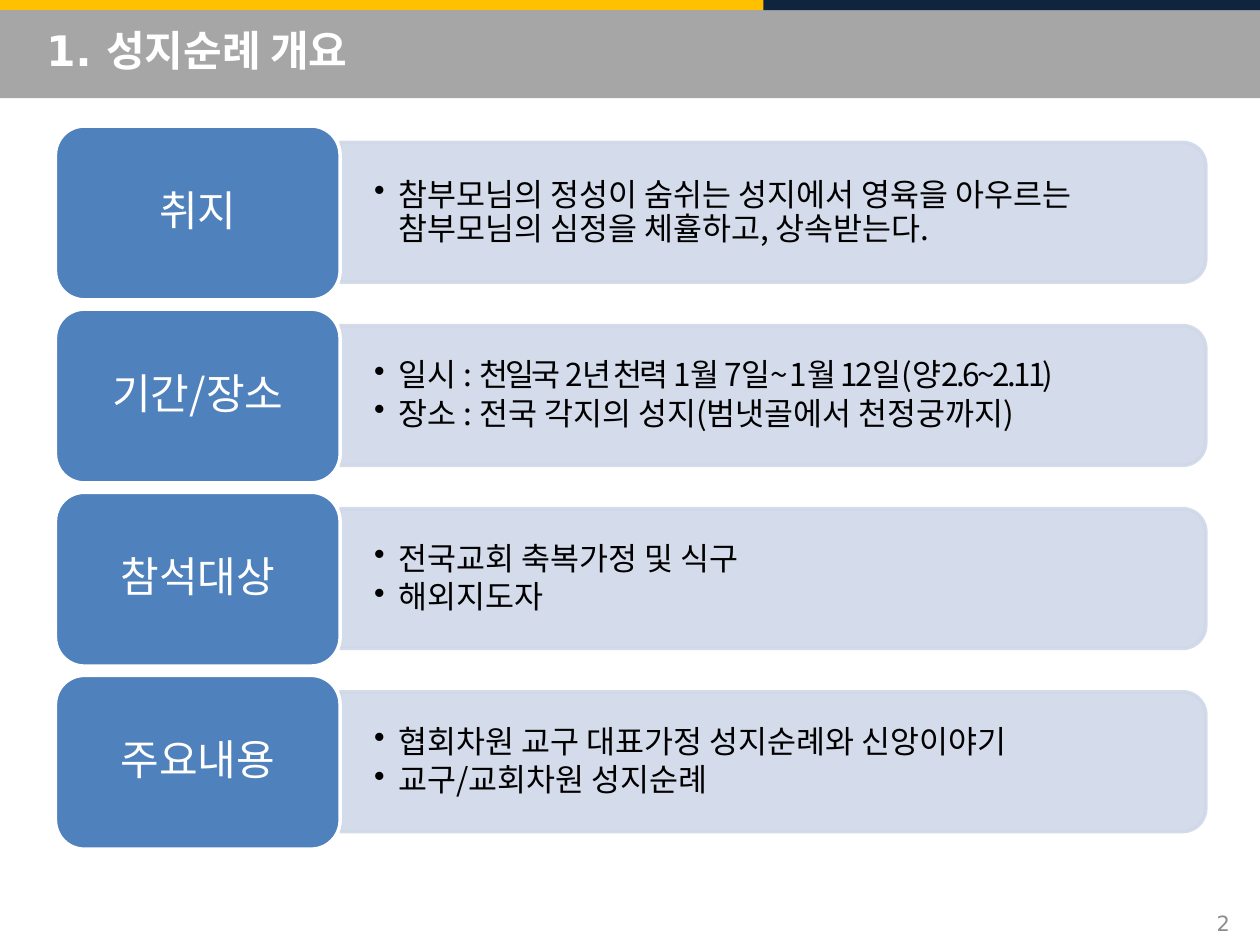
import pptx
import pptx.util
import pptx.dml.color
import pptx.enum.shapes
import pptx.enum.text
import pptx.oxml.ns
from lxml import etree
from dataclasses import dataclass

Inches = pptx.util.Inches
Pt = pptx.util.Pt
Shape = pptx.enum.shapes.MSO_SHAPE
Align = pptx.enum.text.PP_ALIGN
qn = pptx.oxml.ns.qn


@dataclass(frozen=True)
class Theme:
    gold: str = "FFC000"
    navy: str = "0F243E"
    gray: str = "A6A6A6"
    blue: str = "4F81BD"
    pale: str = "D0D8E8"
    white: str = "FFFFFF"
    black: str = "000000"
    mute: str = "8C8C8C"
    head: str = "DejaVu Sans"
    body: str = "Noto Sans CJK KR"
    large: int = 24
    mid: int = 18
    small: int = 12


class Deck:
    def __init__(self, slide, theme):
        self.slide = slide
        self.theme = theme

    def shape(self, kind, box, fill, line=None, alpha=None):
        """Add a filled shape; alpha is the opacity in percent."""
        item = self.slide.shapes.add_shape(kind, *map(Inches, box))
        item.shadow.inherit = False
        self.paint(item.fill, fill, alpha)
        if line:
            item.line.width = Pt(2)
            self.paint(item.line.fill, line, alpha)
        else:
            item.line.fill.background()
        return item

    def paint(self, fill, color, alpha):
        fill.solid()
        fill.fore_color.rgb = pptx.dml.color.RGBColor.from_string(color)
        if alpha:
            tag = fill._xPr.find(qn("a:solidFill"))[0]
            etree.SubElement(tag, qn("a:alpha")).set("val", str(alpha * 1000))

    def frame(self, box, inset=(0.1, 0.05)):
        text = self.slide.shapes.add_textbox(*map(Inches, box)).text_frame
        return self.setup(text, inset)

    def setup(self, text, inset=(0.1, 0.05)):
        """Wrap the text, centre it vertically and set its margins."""
        text.word_wrap = True
        text.vertical_anchor = pptx.enum.text.MSO_ANCHOR.MIDDLE
        text.margin_left = text.margin_right = Inches(inset[0])
        text.margin_top = text.margin_bottom = Inches(inset[1])
        return text

    def run(self, para, words, size, color, face, bold=False, track=None):
        run = para.add_run()
        run.text = words
        font = run.font
        font.size, font.bold, font.name = Pt(size), bold, face
        font.color.rgb = pptx.dml.color.RGBColor.from_string(color)
        props = run._r.get_or_add_rPr()
        etree.SubElement(props, qn("a:ea")).set("typeface", self.theme.body)
        if track:
            props.set("spc", str(int(track * 100)))

    def line(self, box, words, size, color, align, bold=False):
        para = self.frame(box).paragraphs[0]
        para.alignment = align
        self.run(para, words, size, color, self.theme.head, bold)

    def label(self, box, words):
        t = self.theme
        item = self.shape(Shape.ROUNDED_RECTANGLE, box, t.blue, t.white)
        para = self.setup(item.text_frame).paragraphs[0]
        para.alignment = Align.CENTER
        para.line_spacing, para.space_after = 0.9, Pt(0.35 * t.large)
        self.run(para, words, t.large, t.white, t.body)

    def panel(self, left, top, wide, high):
        """Add a panel rounded on the right: a top-rounded one, turned."""
        box = (left + (wide - high) / 2, top + (high - wide) / 2, high, wide)
        item = self.shape(Shape.ROUND_2_SAME_RECTANGLE, box, self.theme.pale,
                          self.theme.pale, 90)
        item.rotation = 90

    def bullets(self, box, items):
        t = self.theme
        text = self.frame(box, (0.27, 0.14))
        for i, runs in enumerate(items):
            para = text.add_paragraph() if i else text.paragraphs[0]
            props = para._p.get_or_add_pPr()
            props.set("marL", str(Inches(0.19)))
            props.set("indent", str(-Inches(0.19)))
            para.line_spacing, para.space_after = 0.9, Pt(0.15 * t.mid)
            etree.SubElement(props, qn("a:buChar")).set("char", "•")
            for words, track in runs:
                self.run(para, words, t.mid, t.black, t.body, track=track)


ROWS = [
    ("취지", [[("참부모님의 정성이 숨쉬는 성지에서 영육을 아우르는 "
              "참부모님의 심정을 체휼하고, 상속받는다.", None)]]),
    ("기간/장소", [[("일시 : ", None),
                ("천일국 2년 천력 1월 7일~ 1월 12일(양2.6~2.11)", -1.5)],
               [("장소 : 전국 각지의 성지(범냇골에서 천정궁까지)", None)]]),
    ("참석대상", [[("전국교회 축복가정 및 식구", None)], [("해외지도자", None)]]),
    ("주요내용", [[("협회차원 교구 대표가정 성지순례와 신앙이야기", None)],
              [("교구/교회차원 성지순례", None)]]),
]


def main():
    show = pptx.Presentation()
    show.slide_width, show.slide_height = Inches(10), Inches(7.5)
    t = Theme()
    deck = Deck(show.slides.add_slide(show.slide_layouts[6]), t)

    deck.shape(Shape.RECTANGLE, (0, 0, 10, 0.08), t.gold)
    deck.shape(Shape.RECTANGLE, (0, 0.08, 10, 0.7), t.gray)
    deck.shape(Shape.RECTANGLE, (6.06, 0, 3.94, 0.08), t.navy)
    deck.line((0.27, 0.08, 9.27, 0.63), "1. 성지순례 개요", t.large, t.white,
              Align.LEFT, True)
    deck.line((7.53, 7.13, 2.33, 0.4), "2", t.small, t.mute, Align.RIGHT)

    step = 4.36 / 3
    for i, (name, items) in enumerate(ROWS):
        top = 1 + i * step
        deck.panel(2.7, top + 0.13, 6.87, 1.11)
        deck.bullets((2.7, top + 0.19, 6.81, 1), items)
        deck.label((0.44, top, 2.26, 1.38), name)

    show.save("out.pptx")


if __name__ == "__main__":
    main()
